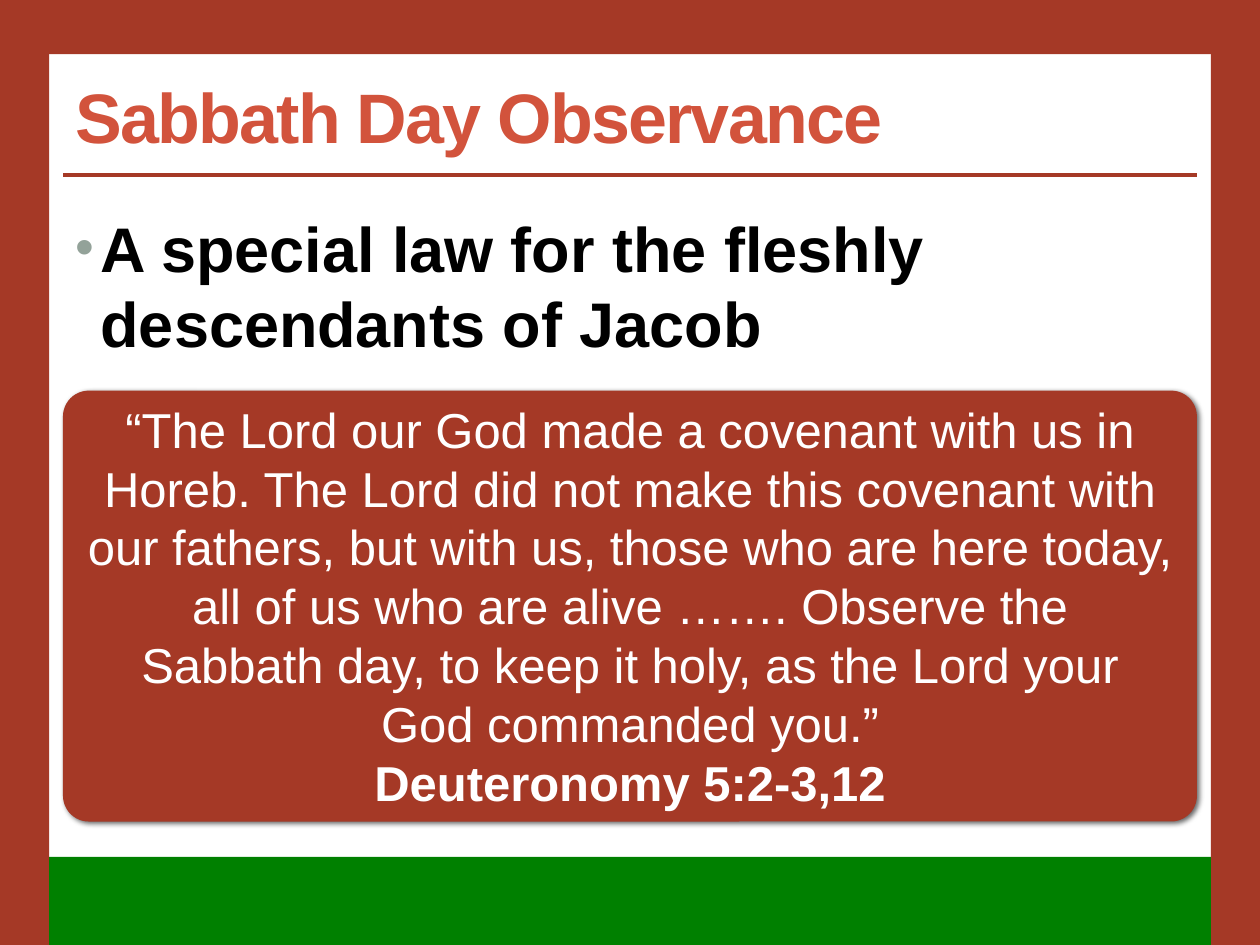
from lxml.etree import SubElement
from pptx import Presentation
from pptx.dml.color import RGBColor
from pptx.enum.shapes import MSO_CONNECTOR as Connector, MSO_SHAPE as Shape
from pptx.enum.text import MSO_ANCHOR as Anchor, PP_ALIGN as Align
from pptx.oxml.ns import qn
from pptx.util import Inches, Pt

BRICK = RGBColor(0xA5, 0x39, 0x26)
CORAL = RGBColor(0xD2, 0x53, 0x3C)
GREEN = RGBColor(0x00, 0x80, 0x00)
SAGE = RGBColor(0x93, 0xA2, 0x99)
BLACK = RGBColor(0x00, 0x00, 0x00)
WHITE = RGBColor(0xFF, 0xFF, 0xFF)

WIDTH, HEIGHT = 10, 7.5
SIDE = 0.39
MARGIN = 0.5
CONTENT = WIDTH - 2 * MARGIN
QUOTE_LINES = [
    "“The Lord our God made a covenant with us in Horeb. The Lord did not make "
    "this covenant with our fathers, but with us, those who are here today, "
    "all of us who are alive ……. Observe the",
    "Sabbath day, to keep it holy, as the Lord your",
    "God commanded you.”",
]


def add_block(page, kind, left, top, width, height, color):
    block = page.shapes.add_shape(
        kind, Inches(left), Inches(top), Inches(width), Inches(height))
    block.shadow.inherit = False
    block.fill.solid()
    block.fill.fore_color.rgb = color
    block.line.fill.background()
    return block


def add_shadow(block):
    effects = block._element.spPr.find(qn("a:effectLst"))
    shadow = SubElement(effects, qn("a:outerShdw"), blurRad=str(Pt(3)),
                        dist=str(Pt(2)), dir=str(45 * 60000), rotWithShape="0")
    color = SubElement(shadow, qn("a:srgbClr"), val=str(BLACK))
    SubElement(color, qn("a:alpha"), val="60000")


def add_rule(page, top):
    rule = page.shapes.add_connector(
        Connector.STRAIGHT, Inches(MARGIN), Inches(top),
        Inches(MARGIN + CONTENT), Inches(top))
    rule.line.color.rgb = BRICK
    rule.line.width = Pt(2.08)
    SubElement(rule._element.spPr, qn("a:effectLst"))


def add_text_frame(page, top, height, anchor=Anchor.TOP):
    box = page.shapes.add_textbox(
        Inches(MARGIN), Inches(top), Inches(CONTENT), Inches(height))
    frame = box.text_frame
    frame.word_wrap = True
    frame.vertical_anchor = anchor
    return frame


def add_span(para, text, size, color, bold=False):
    span = para.add_run()
    span.text = text
    span.font.name = "Arial"
    span.font.size = Pt(size)
    span.font.bold = bold
    span.font.color.rgb = color
    return span


def add_bullet(para):
    properties = para._p.get_or_add_pPr()
    properties.set("marL", str(Inches(0.2)))
    properties.set("indent", str(Inches(-0.2)))
    color = SubElement(properties, qn("a:buClr"))
    SubElement(color, qn("a:srgbClr"), val=str(SAGE))
    SubElement(properties, qn("a:buSzPct"), val="85000")
    SubElement(properties, qn("a:buFont"), typeface="Arial")
    SubElement(properties, qn("a:buChar"), char="•")


def add_title(page):
    para = add_text_frame(page, 0.44, 0.95, Anchor.MIDDLE).paragraphs[0]
    span = add_span(para, "Sabbath Day Observance", 40, CORAL, bold=True)
    span.font._element.set("spc", "-100")


def add_statement(page):
    para = add_text_frame(page, 1.61, 1.49).paragraphs[0]
    add_bullet(para)
    add_span(para, "A special law for the fleshly descendants of Jacob",
             36, BLACK, bold=True)


def add_quote(page):
    card = add_block(page, Shape.ROUNDED_RECTANGLE,
                     MARGIN, 3.1, CONTENT, 3.42, BRICK)
    card.adjustments[0] = 0.06
    add_shadow(card)
    frame = add_text_frame(page, 3.12, 3.4)
    verse, citation = frame.paragraphs[0], frame.add_paragraph()
    for para in (verse, citation):
        para.alignment = Align.CENTER
    for number, line in enumerate(QUOTE_LINES):
        if number:
            verse.add_line_break()
        add_span(verse, line, 28, WHITE)
    add_span(citation, "Deuteronomy 5:2-3,12", 28, WHITE, bold=True)


def add_border(page):
    add_block(page, Shape.RECTANGLE, 0, 0, WIDTH, 0.43, BRICK)
    for left in (0, WIDTH - SIDE):
        add_block(page, Shape.RECTANGLE, left, 0, SIDE, HEIGHT, BRICK)
    add_block(page, Shape.RECTANGLE, SIDE, 6.8, WIDTH - 2 * SIDE, 0.7, GREEN)


def main():
    deck = Presentation()
    deck.slide_width, deck.slide_height = Inches(WIDTH), Inches(HEIGHT)
    page = deck.slides.add_slide(deck.slide_layouts[6])
    add_title(page)
    add_statement(page)
    add_border(page)
    add_rule(page, 1.39)
    add_quote(page)
    deck.save("out.pptx")


if __name__ == "__main__":
    main()
